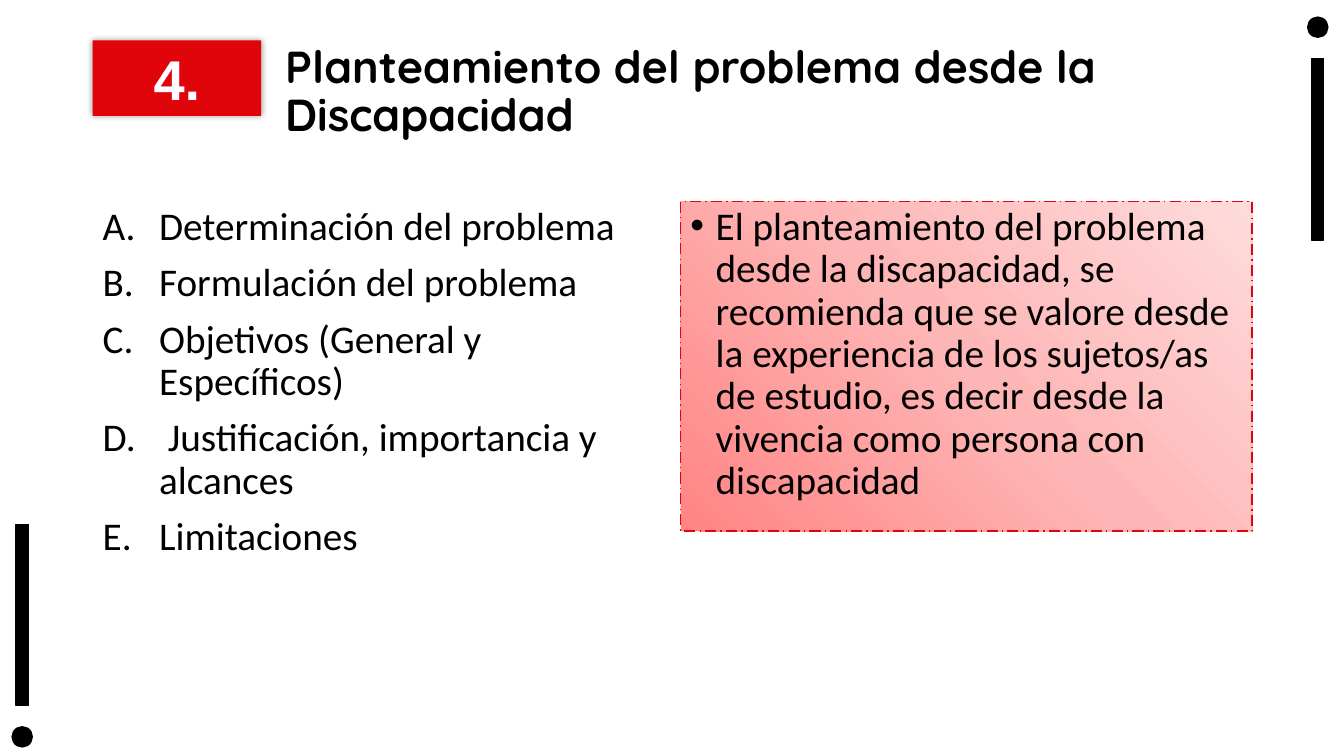
"""Build the slide on stating the problem from the perspective of disability."""
from lxml.etree import SubElement
from pptx import Presentation
from pptx.dml.color import RGBColor
from pptx.enum.dml import MSO_LINE
from pptx.enum.shapes import MSO_SHAPE as Shape
from pptx.enum.text import MSO_ANCHOR as Anchor, PP_ALIGN as Align
from pptx.oxml.ns import qn
from pptx.util import Inches, Pt

WIDTH, HEIGHT = 13.33, 7.5
LEFT, COLUMN, GAP = 0.92, 5.67, 0.16
TOP, BODY_TOP = 0.4, 2
COLORS = {"ink": "000000", "red": "DF050B", "paper": "FFFFFF"}
PINK_STOPS = {0: "FF8484", 50: "FEB5B5", 100: "FEDBDB"}
TITLE = "Planteamiento del problema desde la Discapacidad"
TOPICS = [
    "Determinación del problema",
    "Formulación del problema",
    "Objetivos (General y Específicos)",
    " Justificación, importancia y alcances",
    "Limitaciones",
]
ADVICE = (
    "El planteamiento del problema desde la discapacidad, se recomienda que se "
    "valore desde la experiencia de los sujetos/as de estudio, es decir desde la "
    "vivencia como persona con discapacidad"
)


def color(name):
    """Return the named colour."""
    return RGBColor.from_string(COLORS[name])


def add_block(page, kind, place, fill):
    """Add a flat filled shape without outline."""
    block = page.shapes.add_shape(kind, *map(Inches, place))
    block.shadow.inherit = False
    block.fill.solid()
    block.fill.fore_color.rgb = color(fill)
    block.line.fill.background()
    return block


def add_mark(page, flipped):
    """Add a dot and bar at the top right, or turned round at the bottom left."""
    for kind, place in (
        (Shape.OVAL, (12.97, 0.17, 0.2, 0.2)),
        (Shape.RECTANGLE, (13.01, 0.58, 0.12, 1.8)),
    ):
        left, top, width, height = place
        if flipped:
            left = WIDTH - left - width - 0.04
            top = HEIGHT - top - height + 0.08
        piece = add_block(page, kind, (left, top, width, height), "ink")
        piece.rotation = 180 if flipped else 0
        piece.line.color.rgb = color("ink")
        piece.line.width = Pt(1)


def add_text_box(page, place):
    """Add an empty wrapping text box."""
    box = page.shapes.add_textbox(*map(Inches, place))
    box.text_frame.word_wrap = True
    return box


def style(para, name, size, ink="ink", bold=False, spacing=0.9):
    """Set the font and line spacing of a paragraph."""
    para.line_spacing = spacing
    para.font.name, para.font.size, para.font.bold = name, Pt(size), bold
    para.font.color.rgb = color(ink)


def add_bullet(para, indent, tag, **settings):
    """Give a paragraph a hanging indent and a list marker."""
    props = para._p.get_or_add_pPr()
    props.set("marL", str(Inches(indent)))
    props.set("indent", str(-Inches(indent)))
    marker_color = SubElement(props, qn("a:buClr"))
    SubElement(marker_color, qn("a:srgbClr"), val=COLORS["ink"])
    SubElement(props, qn("a:buFont"), typeface="Arial" if tag == "a:buChar" else "+mj-lt")
    SubElement(props, qn(tag), **settings)


def fill_list(frame, items, indent, tag, **settings):
    """Write the items as a bulleted list."""
    for index, item in enumerate(items):
        para = frame.add_paragraph() if index else frame.paragraphs[0]
        para.text = item
        para.alignment = Align.LEFT
        add_bullet(para, indent, tag, **settings)
        style(para, "Calibri", 28)
        if index:
            para.space_before = Pt(10)


def add_soft_shadow(shape):
    """Add an even blurred shadow around a shape."""
    effects = shape._element.spPr.find(qn("a:effectLst"))
    shadow = SubElement(effects, qn("a:outerShdw"), blurRad=str(Pt(5)), algn="ctr", rotWithShape="0")
    tint = SubElement(shadow, qn("a:srgbClr"), val=COLORS["ink"])
    SubElement(tint, qn("a:alpha"), val="40000")


def add_number(page, text):
    """Add the red section number."""
    badge = add_block(page, Shape.RECTANGLE, (LEFT, TOP, 1.67, 0.75), "red")
    add_soft_shadow(badge)
    badge.text_frame.vertical_anchor = Anchor.MIDDLE
    para = badge.text_frame.paragraphs[0]
    para.text = text
    para.alignment = Align.CENTER
    style(para, "Arial", 40, "paper", True, 1.0)


def add_title(page):
    """Add the title beside the section number."""
    box = add_text_box(page, (2.73, TOP, 9.69, 1.05))
    box.text_frame.vertical_anchor = Anchor.MIDDLE
    para = box.text_frame.paragraphs[0]
    para.text = TITLE
    style(para, "Quicksand", 32, bold=True)


def add_advice(page):
    """Add the pink panel with its advice."""
    panel = add_block(
        page, Shape.RECTANGLE, (LEFT + COLUMN + GAP, BODY_TOP, COLUMN, 3.27), "paper"
    )
    panel.fill.gradient()
    panel.fill.gradient_angle = 45
    stops = panel._element.spPr.find(".//" + qn("a:gsLst"))
    stops.clear()
    for share, tint in PINK_STOPS.items():
        stop = SubElement(stops, qn("a:gs"), pos=str(share * 1000))
        SubElement(stop, qn("a:srgbClr"), val=tint)
    panel.line.color.rgb = color("red")
    panel.line.width = Pt(1)
    panel.line.dash_style = MSO_LINE.LONG_DASH_DOT
    panel.text_frame.vertical_anchor = Anchor.TOP
    fill_list(panel.text_frame, [ADVICE], 0.25, "a:buChar", char="•")


def main():
    """Build and save the deck."""
    deck = Presentation()
    deck.slide_width, deck.slide_height = Inches(WIDTH), Inches(HEIGHT)
    page = deck.slides.add_slide(deck.slide_layouts[6])
    for flipped in (False, True):
        add_mark(page, flipped)
    add_title(page)
    topics = add_text_box(page, (LEFT, BODY_TOP, COLUMN, 4.76))
    fill_list(topics.text_frame, TOPICS, 0.56, "a:buAutoNum", type="alphaUcPeriod")
    add_advice(page)
    add_number(page, "4.")
    deck.save("out.pptx")


if __name__ == "__main__":
    main()
